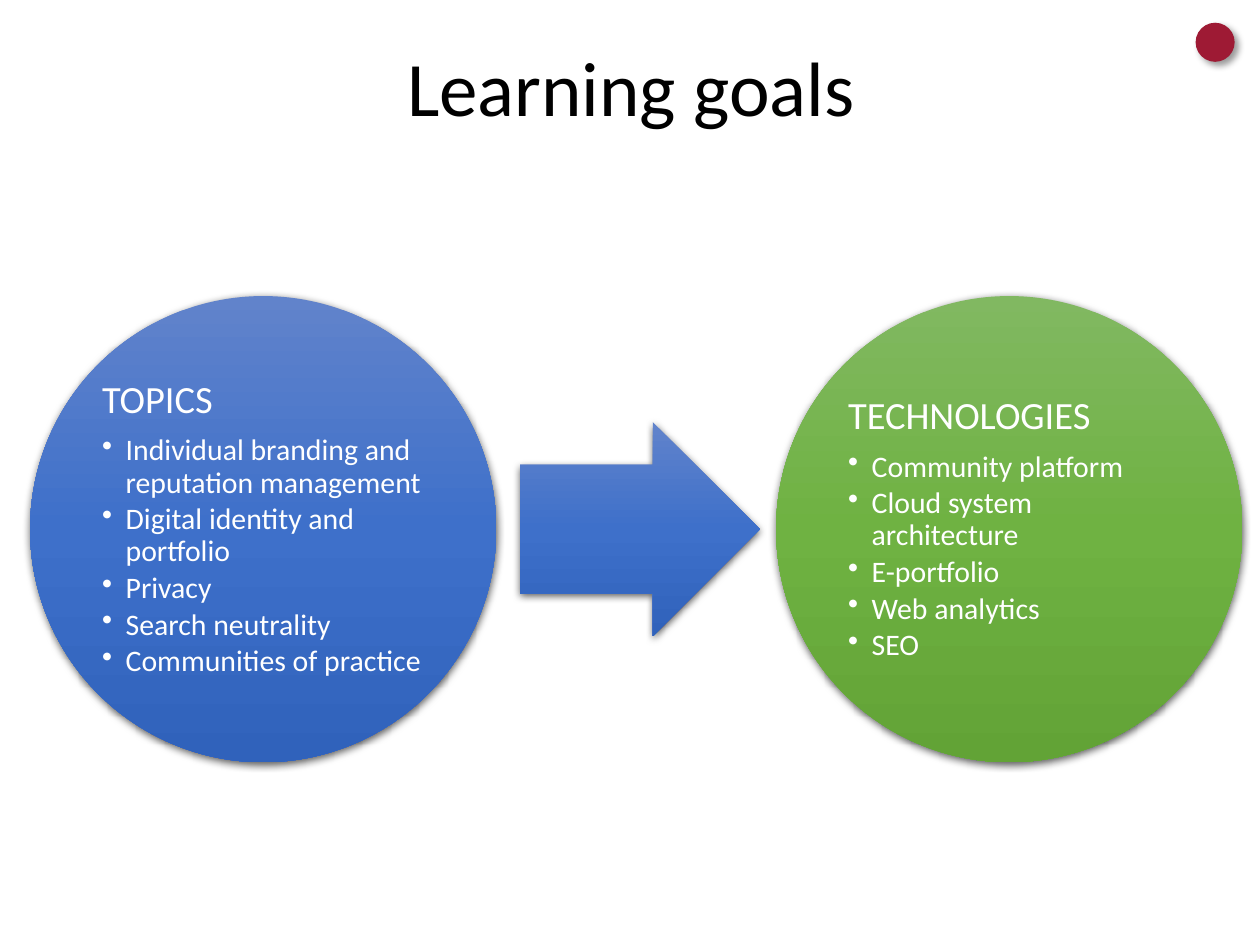
from lxml.etree import SubElement
from pptx import Presentation
from pptx.dml.color import RGBColor
from pptx.enum.shapes import MSO_SHAPE as Form
from pptx.enum.text import MSO_ANCHOR as Anchor, PP_ALIGN as Align
from pptx.oxml.ns import qn
from pptx.util import Pt

TITLE = "Learning goals"
BLUE = [RGBColor(0x61, 0x83, 0xCB), RGBColor(0x3E, 0x70, 0xCA), RGBColor(0x30, 0x62, 0xBB)]
GREEN = [RGBColor(0x81, 0xB8, 0x61), RGBColor(0x6F, 0xB2, 0x42), RGBColor(0x62, 0xA3, 0x36)]
RED = RGBColor(0x9E, 0x1A, 0x34)
BLACK = RGBColor(0, 0, 0)
WHITE = RGBColor(255, 255, 255)
FONT = "Calibri"

GOALS = [
    ("TOPICS", BLUE, [
        "Individual branding and reputation management",
        "Digital identity and portfolio",
        "Privacy",
        "Search neutrality",
        "Communities of practice",
    ]),
    ("TECHNOLOGIES", GREEN, [
        "Community platform",
        "Cloud system architecture",
        "E-portfolio",
        "Web analytics",
        "SEO",
    ]),
]

LEFT, TOP, SIZE, STEP = 17.2, 169.2, 266.4, 426.3
INNER = 188.6
PAD = (SIZE - INNER) / 2
INDENT = 13.5
ARROW_W, ARROW_H = 137, 122.4


def add(parent, tag, **attrs):
    return SubElement(parent, qn(tag), {k: str(v) for k, v in attrs.items()})


def shade(shape, colors):
    """Fill a shape with evenly spaced colours from top to bottom."""
    shape.fill.gradient()
    shape.fill.gradient_angle = 270
    stops = shape._element.spPr.find(".//" + qn("a:gsLst"))
    stops.clear()
    for i, color in enumerate(colors):
        stop = add(stops, "a:gs", pos=100000 * i // (len(colors) - 1))
        add(stop, "a:srgbClr", val=color)


def shadow(shape, alpha, blur, dist, angle):
    shape.shadow.inherit = False
    effects = shape._element.spPr.find(qn("a:effectLst"))
    outer = add(effects, "a:outerShdw", blurRad=Pt(blur), dist=Pt(dist),
                dir=angle * 60000, algn="ctr", rotWithShape=0)
    color = add(outer, "a:srgbClr", val=BLACK)
    add(color, "a:alpha", val=alpha * 1000)


def draw(slide, form, x, y, w, h, fill, cast=(63, 4.5, 1.5, 90)):
    shape = slide.shapes.add_shape(form, Pt(x), Pt(y), Pt(w), Pt(h))
    if isinstance(fill, list):
        shade(shape, fill)
    else:
        shape.fill.solid()
        shape.fill.fore_color.rgb = fill
    shape.line.fill.background()
    shadow(shape, *cast)
    return shape


def box(slide, x, y, w, h, pad_x, pad_y):
    frame = slide.shapes.add_textbox(Pt(x), Pt(y), Pt(w), Pt(h)).text_frame
    frame.word_wrap = True
    frame.vertical_anchor = Anchor.MIDDLE
    frame.margin_left = frame.margin_right = Pt(pad_x)
    frame.margin_top = frame.margin_bottom = Pt(pad_y)
    return frame


def write(para, text, size, color=WHITE, align=Align.LEFT, after=0, bullet=False):
    if bullet:
        props = para._p.get_or_add_pPr()
        props.set("marL", str(Pt(INDENT)))
        props.set("indent", str(-Pt(INDENT)))
        add(props, "a:buChar", char="•")
    para.alignment = align
    para.line_spacing = 0.9
    para.space_after = Pt(after)
    run = para.add_run()
    run.text = text
    run.font.name = FONT
    run.font.size = Pt(size)
    run.font.color.rgb = color


def main():
    deck = Presentation()
    deck.slide_width, deck.slide_height = Pt(720), Pt(540)
    slide = deck.slides.add_slide(deck.slide_layouts[6])

    title = box(slide, 50.4, 13, 620.6, 79.2, 7.2, 3.6)
    write(title.paragraphs[0], TITLE, 44, color=BLACK, align=Align.CENTER)

    for i, (head, colors, items) in enumerate(GOALS):
        x = LEFT + i * STEP
        draw(slide, Form.OVAL, x, TOP, SIZE, SIZE, colors)
        frame = box(slide, x + PAD, TOP + PAD, INNER, INNER, 2.2, 2.2)
        write(frame.paragraphs[0], head, 22, after=7.7)
        for item in items:
            write(frame.add_paragraph(), item, 17, after=2.55, bullet=True)

    arrow = draw(slide, Form.RIGHT_ARROW, 297.2, TOP + (SIZE - ARROW_H) / 2,
                 ARROW_W, ARROW_H, BLUE)
    arrow.adjustments[0], arrow.adjustments[1] = 0.6, 0.5

    draw(slide, Form.OVAL, 683.2, 13, 22.3, 22.3, RED, cast=(40, 4, 3, 45))
    deck.save("out.pptx")


if __name__ == "__main__":
    main()
